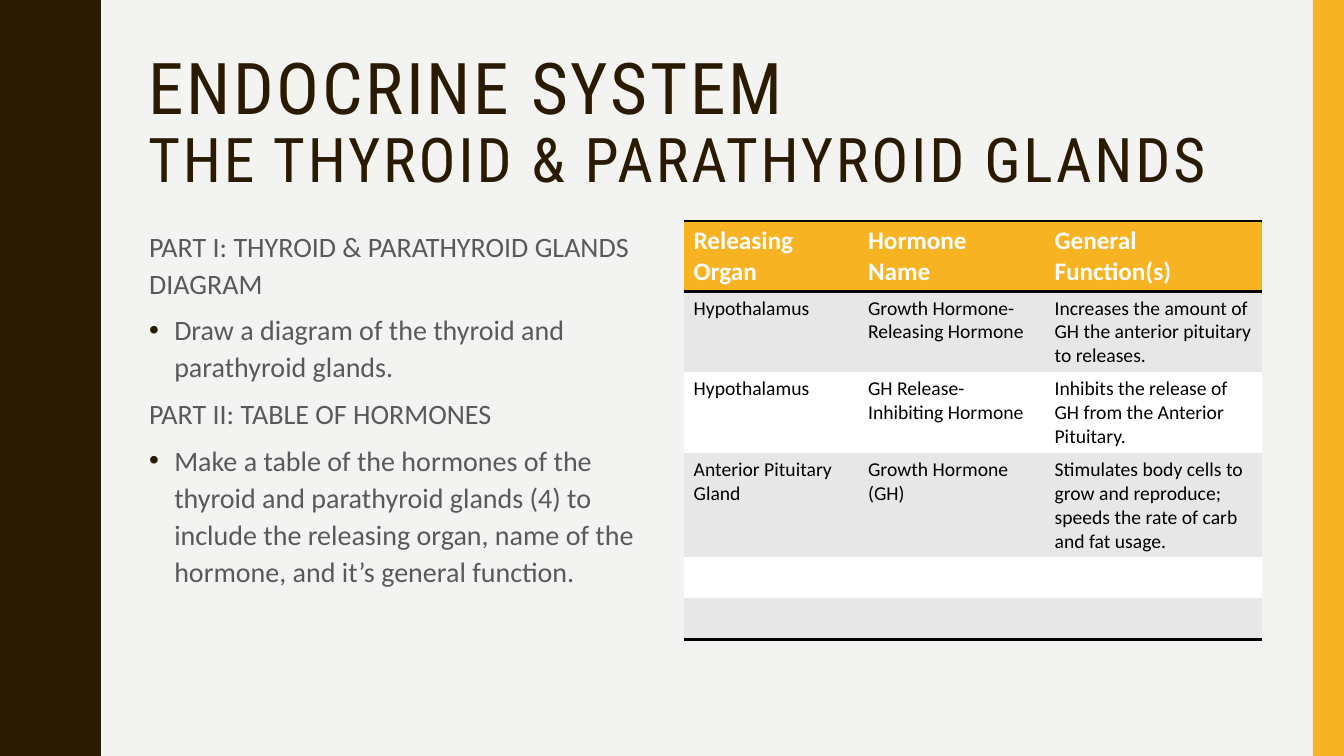
from dataclasses import dataclass

from lxml import etree
from pptx import Presentation
from pptx import util as u
from pptx.dml.color import RGBColor
from pptx.enum import shapes, text
from pptx.oxml import ns

TITLE = ("ENDOCRINE SYSTEM", "THE THYROID & PARATHYROID GLANDS")
ASSIGNMENT = [  # (bulleted, wording)
    (False, "PART I: THYROID & PARATHYROID GLANDS DIAGRAM"),
    (True, "Draw a diagram of the thyroid and parathyroid glands."),
    (False, "PART II: TABLE OF HORMONES"),
    (True, "Make a table of the hormones of the thyroid and parathyroid glands (4) to include "
           "the releasing organ, name of the hormone, and it’s general function."),
]
HORMONES = [
    ("Releasing Organ", "Hormone Name", "General Function(s)"),
    ("Hypothalamus", "Growth Hormone-Releasing Hormone",
     "Increases the amount of GH the anterior pituitary to releases."),
    ("Hypothalamus", "GH Release-Inhibiting Hormone",
     "Inhibits the release of GH from the Anterior Pituitary."),
    ("Anterior Pituitary Gland", "Growth Hormone (GH)",
     "Stimulates body cells to grow and reproduce; speeds the rate of carb and fat usage."),
    ("", "", ""),
    ("", "", ""),
]


@dataclass(frozen=True)
class Theme:
    paper: str = "F3F3F2"
    dark: str = "2A1A00"
    accent: str = "F8B323"
    body: str = "595959"
    black: str = "000000"
    white: str = "FFFFFF"
    band: str = "E7E7E7"
    title_font: str = "Roboto Condensed"
    body_font: str = "Calibri"
    title_sizes: tuple = (51, 44)
    body_size: int = 20
    header_size: int = 18
    cell_size: int = 14


THEME = Theme()
WIDTH, HEIGHT = 13.33, 7.5
STRIPE_WIDTH = 0.31
TITLE_BOX = (1.37, 0.42, 11.13, 1.63)
ASSIGNMENT_BOX = (1.38, 2.19, 5.25, 4.79)
TABLE_LEFT, TABLE_TOP = 6.78, 2.19
COLUMNS, ROW_HEIGHT = (1.73, 1.85, 2.16), 0.41
INDENT = 0.25
WAVE_COUNT = 5
# Left half of one crest: (edge x, distance down from the trough)
HALF_CREST = [(0.78, 0), (0.78, 0.07), (0.79, 0.14), (0.8, 0.2), (0.81, 0.25), (0.83, 0.29),
              (0.85, 0.33), (0.87, 0.38), (0.89, 0.42), (0.91, 0.46), (0.93, 0.5),
              (0.95, 0.55), (0.96, 0.61), (0.97, 0.68), (0.97, 0.75)]


def rgb(code):
    return RGBColor.from_string(code)


def inches(lengths):
    return [u.Inches(length) for length in lengths]


def style(run, font, size, color, bold=False):
    run.font.name, run.font.size, run.font.bold = font, u.Pt(size), bold
    run.font.color.rgb = rgb(color)


def paint(shape, color):
    shape.shadow.inherit = False
    shape.fill.solid()
    shape.fill.fore_color.rgb = rgb(color)
    shape.line.fill.background()


def add_color(parent, tag, color):
    holder = etree.SubElement(parent, ns.qn(tag))
    etree.SubElement(holder, ns.qn("a:srgbClr"), val=color)


def add_bullet(paragraph):
    props = paragraph._p.get_or_add_pPr()
    props.set("marL", str(u.Inches(INDENT)))
    props.set("indent", str(-u.Inches(INDENT)))
    add_color(props, "a:buClr", THEME.dark)
    etree.SubElement(props, ns.qn("a:buFont"), typeface="Arial")
    etree.SubElement(props, ns.qn("a:buChar"), char="•")


def set_borders(cell, ruled):
    """Rule the named sides in black and clear the others; call before filling."""
    props = cell._tc.get_or_add_tcPr()
    for side in "LRTB":
        if side in ruled:
            line = etree.SubElement(props, ns.qn(f"a:ln{side}"), w=str(u.Pt(2)))
            add_color(line, "a:solidFill", THEME.black)
        else:
            line = etree.SubElement(props, ns.qn(f"a:ln{side}"), w="0")
            etree.SubElement(line, ns.qn("a:noFill"))


def add_text_frame(slide, box):
    frame = slide.shapes.add_textbox(*inches(box)).text_frame
    frame.word_wrap = True
    return frame


def draw_edges(slide):
    period = HEIGHT / WAVE_COUNT
    crest = HALF_CREST + [(x, period - y) for x, y in HALF_CREST[-2::-1]]
    edge = [(x, y + wave * period) for wave in range(WAVE_COUNT) for x, y in crest]
    builder = slide.shapes.build_freeform(0, 0, scale=u.Inches(1))
    builder.add_line_segments(edge + [(0, HEIGHT)], close=True)
    paint(builder.convert_to_shape(), THEME.dark)
    stripe = inches((WIDTH - STRIPE_WIDTH, 0, STRIPE_WIDTH, HEIGHT))
    paint(slide.shapes.add_shape(shapes.MSO_SHAPE.RECTANGLE, *stripe), THEME.accent)


def draw_title(slide):
    frame = add_text_frame(slide, TITLE_BOX)
    frame.vertical_anchor = text.MSO_ANCHOR.MIDDLE
    heading = frame.paragraphs[0]
    heading.text = "\v".join(TITLE)
    heading.line_spacing = 0.9
    for run, size in zip(heading.runs, THEME.title_sizes):
        style(run, THEME.title_font, size, THEME.dark)
        run.font._element.set("spc", "200")


def draw_assignment(slide):
    frame = add_text_frame(slide, ASSIGNMENT_BOX)
    frame.text = "\n".join(wording for _, wording in ASSIGNMENT)
    for paragraph, (bulleted, _) in zip(frame.paragraphs, ASSIGNMENT):
        paragraph.line_spacing, paragraph.space_before = 1.1, u.Pt(7)
        style(paragraph.runs[0], THEME.body_font, THEME.body_size, THEME.body)
        if bulleted:
            add_bullet(paragraph)


def draw_hormones(slide):
    box = inches((TABLE_LEFT, TABLE_TOP, sum(COLUMNS), ROW_HEIGHT * len(HORMONES)))
    table = slide.shapes.add_table(len(HORMONES), len(COLUMNS), *box).table
    for column, width in zip(table.columns, COLUMNS):
        column.width = u.Inches(width)
    for r, entries in enumerate(HORMONES):
        header = r == 0
        ruled = "TB" if header else "B" if r == len(HORMONES) - 1 else ""
        fill = THEME.accent if header else THEME.band if r % 2 else THEME.white
        size = THEME.header_size if header else THEME.cell_size
        color = THEME.white if header else THEME.black
        for c, entry in enumerate(entries):
            cell = table.cell(r, c)
            set_borders(cell, ruled)
            cell.fill.solid()
            cell.fill.fore_color.rgb = rgb(fill)
            cell.text = entry
            for run in cell.text_frame.paragraphs[0].runs:
                style(run, THEME.body_font, size, color, bold=header)


def main():
    deck = Presentation()
    deck.slide_width, deck.slide_height = inches((WIDTH, HEIGHT))
    slide = deck.slides.add_slide(deck.slide_layouts[6])
    slide.background.fill.solid()
    slide.background.fill.fore_color.rgb = rgb(THEME.paper)
    draw_edges(slide)
    draw_title(slide)
    draw_assignment(slide)
    draw_hormones(slide)
    deck.save("out.pptx")


if __name__ == "__main__":
    main()
